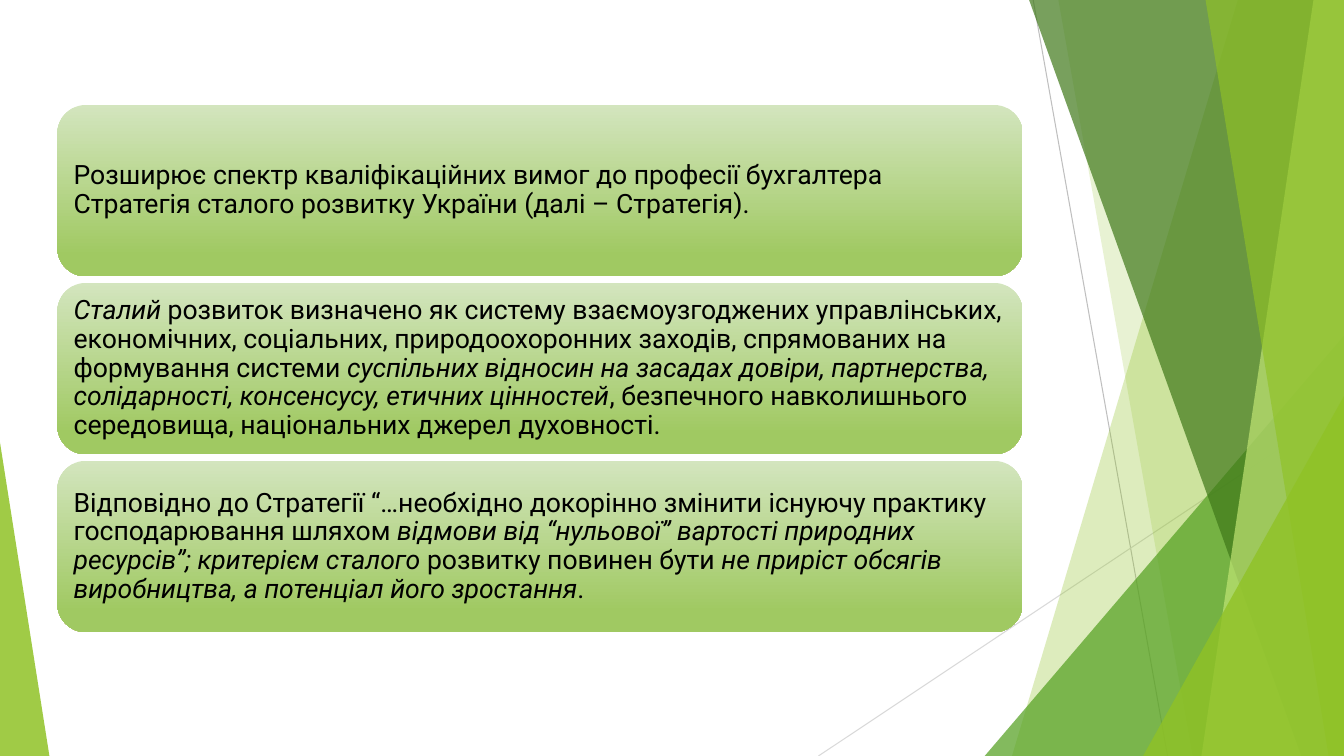
from lxml.etree import SubElement
from pptx import Presentation
from pptx.dml.color import RGBColor
from pptx.enum.shapes import MSO_CONNECTOR as Connector, MSO_SHAPE as Shape
from pptx.enum.text import MSO_ANCHOR as Anchor, PP_ALIGN as Align
from pptx.oxml.ns import qn
from pptx.util import Pt

COLORS = {
    "text": "000000",
    "card_top": "D3E5BE",
    "card_bottom": "A0C962",
    "lime": "90C226",
    "green": "54A021",
    "forest": "3F7819",
    "pale": "C0E474",
    "steep_line": "BFBFBF",
    "flat_line": "D9D9D9",
}
LINES = [("steep_line", 738, 0, 834, 540), ("flat_line", 960, 290, 584.6, 540)]
BACK_PANELS = [(884.2, 722.9, "lime", 30), (756, 851.8, "lime", 20)]
FRONT_PANELS = [
    (735.1, 929.5, "forest", 70),
    (938.2, 858.2, "pale", 70),
    (861.1, 949, "lime", 65),
]
BACK_TRIANGLE = (703.4, 239.8, 256.6, 1, "green", 72)
FRONT_TRIANGLES = [
    (816.5, 283, 143.5, 1, "lime", 80),
    (0, 316.1, 35.3, 0, "lime", 85),
]
CARDS = [
    [("Розширює спектр кваліфікаційних вимог до професії бухгалтера "
      "Стратегія сталого розвитку України (далі – Стратегія).", False)],
    [("Сталий ", True),
     ("розвиток визначено як систему взаємоузгоджених управлінських, економічних, "
      "соціальних, природоохоронних заходів, спрямованих на формування системи ", False),
     ("суспільних відносин на засадах довіри, партнерства, солідарності, "
      "консенсусу, етичних цінностей", True),
     (", безпечного навколишнього середовища, національних джерел духовності.", False)],
    [("Відповідно до Стратегії “…необхідно докорінно змінити існуючу практику "
      "господарювання шляхом ", False),
     ("відмови від “нульової” вартості природних ресурсів”; критерієм сталого ", True),
     ("розвитку повинен бути ", False),
     ("не приріст обсягів виробництва, а потенціал його зростання", True),
     (".", False)],
]
CARD_GAP = 4.7
FRAME_FORMAT = {
    "word_wrap": True,
    "vertical_anchor": Anchor.MIDDLE,
    "margin_left": Pt(5.7),
    "margin_right": Pt(5.7),
    "margin_top": Pt(5.7),
    "margin_bottom": Pt(5.7),
}
PARAGRAPH_FORMAT = {"alignment": Align.LEFT, "line_spacing": 0.9}
FONT_FORMAT = {"name": "Roboto", "size": Pt(19)}


def color(name):
    return RGBColor.from_string(COLORS[name])


def apply_format(target, values):
    for name, value in values.items():
        setattr(target, name, value)


def fill_glass(shape, color_name, opacity):
    shape.shadow.inherit = False
    shape.line.fill.background()
    shape.fill.solid()
    shape.fill.fore_color.rgb = color(color_name)
    tint = shape.fill._xPr.find(qn("a:solidFill"))[0]
    SubElement(tint, qn("a:alpha")).set("val", str(opacity * 1000))


def add_line(slide, left, top, color_name, x1, y1, x2, y2):
    line = slide.shapes.add_connector(
        Connector.STRAIGHT, Pt(left + x1), Pt(top + y1), Pt(left + x2), Pt(top + y2))
    line.line.color.rgb = color(color_name)
    line.line.width = Pt(0.75)
    SubElement(line._element.spPr, qn("a:effectLst"))


def add_panel(slide, left, top, width, height, top_x, bottom_x, color_name, opacity):
    right, bottom = left + width, top + height
    builder = slide.shapes.build_freeform(Pt(left + top_x), Pt(top))
    corners = [(right, top), (right, bottom), (left + bottom_x, bottom)]
    builder.add_line_segments([(Pt(x), Pt(y)) for x, y in corners])
    fill_glass(builder.convert_to_shape(), color_name, opacity)


def add_triangle(slide, left, top, height, x, y, width, apex, color_name, opacity):
    triangle = slide.shapes.add_shape(
        Shape.ISOSCELES_TRIANGLE, Pt(left + x), Pt(top + y), Pt(width), Pt(height - y))
    triangle.adjustments[0] = apex
    fill_glass(triangle, color_name, opacity)


def add_backdrop(slide, left, top, width, height):
    for line in LINES:
        add_line(slide, left, top, *line)
    for panel in BACK_PANELS:
        add_panel(slide, left, top, width, height, *panel)
    add_triangle(slide, left, top, height, *BACK_TRIANGLE)
    for panel in FRONT_PANELS:
        add_panel(slide, left, top, width, height, *panel)
    for triangle in FRONT_TRIANGLES:
        add_triangle(slide, left, top, height, *triangle)


def add_card(slide, left, top, width, height, runs):
    card = slide.shapes.add_shape(
        Shape.ROUNDED_RECTANGLE, Pt(left), Pt(top), Pt(width), Pt(height))
    card.shadow.inherit = False
    card.line.fill.background()
    card.fill.gradient()
    card.fill.gradient_angle = 270
    stops = [(0, "card_top"), (0.88, "card_bottom")]
    for stop, (position, color_name) in zip(card.fill.gradient_stops, stops):
        stop.position = position
        stop.color.rgb = color(color_name)
    apply_format(card.text_frame, FRAME_FORMAT)
    paragraph = card.text_frame.paragraphs[0]
    apply_format(paragraph, PARAGRAPH_FORMAT)
    for text, italic in runs:
        run = paragraph.add_run()
        run.text = text
        apply_format(run.font, FONT_FORMAT | {"italic": italic})
        run.font.color.rgb = color("text")


def add_card_stack(slide, left, top, width, height):
    card_height = (height - CARD_GAP * (len(CARDS) - 1)) / len(CARDS)
    for index, runs in enumerate(CARDS):
        card_top = top + index * (card_height + CARD_GAP)
        add_card(slide, left, card_top, width, card_height, runs)


def main():
    presentation = Presentation()
    presentation.slide_width = Pt(960)
    presentation.slide_height = Pt(540)
    slide = presentation.slides.add_slide(presentation.slide_layouts[6])
    add_backdrop(slide, 0, 0, 960, 540)
    add_card_stack(slide, 41, 75, 689.5, 376.6)
    presentation.save("out.pptx")


if __name__ == "__main__":
    main()
